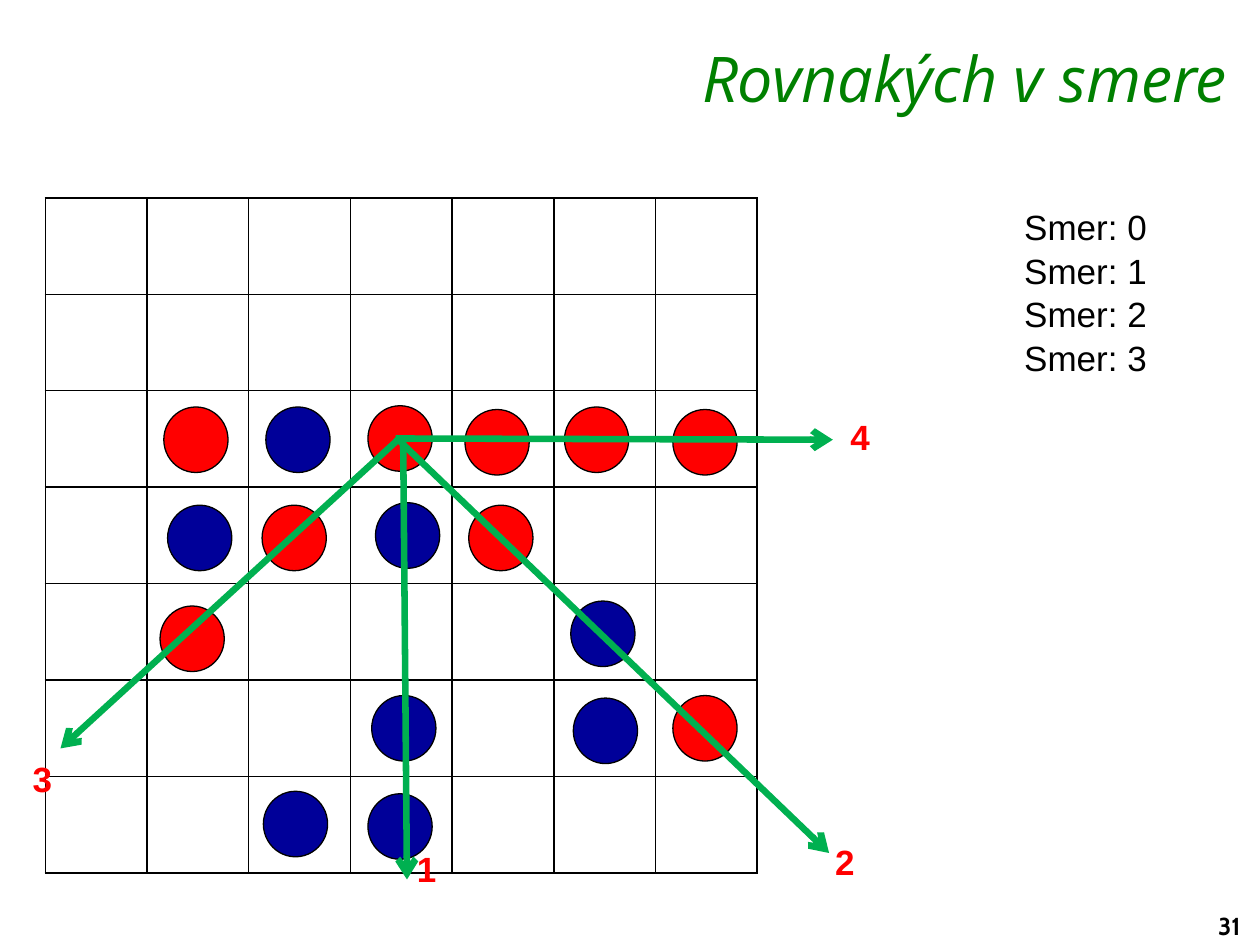
from lxml.etree import SubElement
from pptx import Presentation
from pptx.dml.color import RGBColor
from pptx.enum.shapes import MSO_CONNECTOR as Link, MSO_SHAPE as Shape
from pptx.enum.text import MSO_ANCHOR as Anchor, MSO_AUTO_SIZE as Fit, PP_ALIGN as Align
from pptx.oxml import parse_xml
from pptx.oxml.ns import nsdecls, qn
from pptx.util import Inches, Pt

RED, BLUE, GREEN = "FF0000", "000099", "00B050"
BLACK, WHITE = "000000", "FFFFFF"


def rgb(code):
    return RGBColor.from_string(code)


def write(frame, lines, size, color, face="Arial", bold=False, italic=False):
    """Put each line in its own paragraph of the frame."""
    for i, line in enumerate(lines):
        para = frame.add_paragraph() if i else frame.paragraphs[0]
        if i:
            para.space_before = Pt(1)
        run = para.add_run()
        run.text = line
        font = run.font
        font.name, font.size = face, Pt(size)
        font.bold, font.italic = bold, italic
        font.color.rgb = rgb(color)


prs = Presentation()
prs.slide_width, prs.slide_height = Inches(10), Inches(7.5)
slide = prs.slides.add_slide(prs.slide_layouts[5])
shapes = slide.shapes

# Title
title = shapes.title
title.left, title.top = Inches(2.29), Inches(0.31)
title.width, title.height = Inches(7.55), Inches(0.58)
frame = title.text_frame
frame.auto_size = Fit.NONE
frame.vertical_anchor = Anchor.TOP
frame.margin_top = frame.margin_bottom = 0
write(frame, ["Rovnakých v smere"], 36, "008000", "Open Sans", italic=True)
frame.paragraphs[0].alignment = Align.RIGHT

# Game board
COUNT = 7
table = shapes.add_table(COUNT, COUNT, Inches(0.36), Inches(1.57),
                         Inches(5.65), Inches(5.36)).table
table.first_row = table.horz_banding = False
for cell in table.iter_cells():
    cell.fill.solid()
    cell.fill.fore_color.rgb = rgb(WHITE)
    props = cell._tc.get_or_add_tcPr()
    for i, side in enumerate(("lnL", "lnR", "lnT", "lnB")):
        props.insert(i, parse_xml(
            f'<a:{side} {nsdecls("a")} w="12700"><a:solidFill>'
            f'<a:srgbClr val="{BLACK}"/></a:solidFill></a:{side}>'))

# Discs, placed by hand in their cells
discs = {
    RED: [(1.3, 3.23), (2.92, 3.22), (3.69, 3.25), (4.48, 3.23), (5.34, 3.25),
          (3.72, 4.01), (2.08, 4.01), (1.27, 4.81), (5.34, 5.52)],
    BLUE: [(4.53, 4.77), (2.98, 3.99), (1.33, 4.01), (2.11, 3.23),
           (4.55, 5.54), (2.95, 5.52), (2.92, 6.3), (2.09, 6.28)],
}
for color, spots in discs.items():
    for x, y in spots:
        disc = shapes.add_shape(Shape.OVAL, Inches(x), Inches(y),
                                Inches(0.51), Inches(0.52))
        disc.shadow.inherit = False
        disc.fill.solid()
        disc.fill.fore_color.rgb = rgb(color)
        disc.line.color.rgb = rgb(BLACK)
        disc.line.width = Pt(0.75)

# Directions: number, arrow start, arrow end, label corner
rays = [
    ("4", (3.14, 3.48), (6.61, 3.49), (6.65, 3.25)),
    ("1", (3.2, 3.51), (3.23, 6.98), (3.21, 6.68)),
    ("3", (3.17, 3.48), (0.48, 5.94), (0.16, 5.96)),
    ("2", (3.14, 3.47), (6.58, 6.77), (6.53, 6.62)),
]
for name, start, end, spot in rays:
    ray = shapes.add_connector(Link.STRAIGHT, *map(Inches, start + end))
    ray.line.color.rgb = rgb(GREEN)
    ray.line.width = Pt(3.75)
    SubElement(ray.line._get_or_add_ln(), qn("a:tailEnd"), type="arrow")
    SubElement(ray._element.spPr, qn("a:effectLst"))
    label = shapes.add_textbox(*map(Inches, spot + (0.41, 0.44)))
    label.text_frame.word_wrap = True
    write(label.text_frame, [name], 20, RED, bold=True)

# List of directions
box = shapes.add_textbox(Inches(8.03), Inches(1.58), Inches(1.31), Inches(1.95))
box.text_frame.word_wrap = True
write(box.text_frame, [f"Smer: {i}" for i in range(4)], 20, BLACK)

# Slide number
box = shapes.add_textbox(Inches(9.57), Inches(7.18), Inches(0.51), Inches(0.33))
box.text_frame.word_wrap = True
write(box.text_frame, ["31"], 14, BLACK, "Cabin", bold=True)

prs.save("out.pptx")
